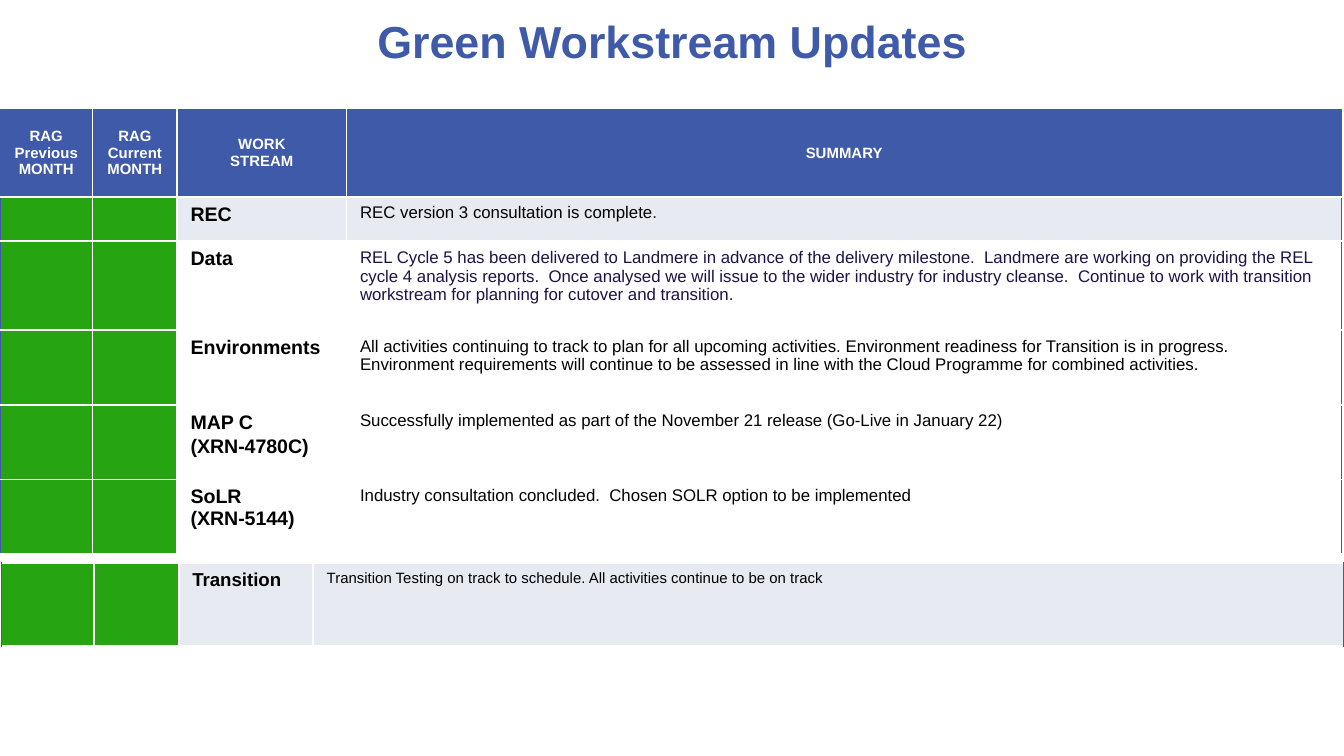
from lxml import etree
from pptx import Presentation
from pptx import util as u
from pptx.dml.color import RGBColor
from pptx.enum import text
from pptx.oxml.ns import qn

COLOURS = {
    "blue": "3E5AA8",
    "green": "26A412",
    "pale": "E8EAF1",
    "white": "FFFFFF",
    "black": "000000",
    "indigo": "1E1246",
}
CENTRE = text.PP_ALIGN.CENTER
LEFT = text.PP_ALIGN.LEFT
MIDDLE = text.MSO_ANCHOR.MIDDLE
TOP = text.MSO_ANCHOR.TOP


class StatusSlide:
    def __init__(self, slide, font="Arial"):
        self.slide = slide
        self.font = font

    def set_lines(self, frame, lines, size, colour, bold=False, align=LEFT, gap=0):
        for i, line in enumerate(lines):
            paragraph = frame.paragraphs[0] if i == 0 else frame.add_paragraph()
            paragraph.text = line
            paragraph.alignment = align
            paragraph.space_before = u.Pt(gap if i else 0)
            paragraph.space_after = u.Pt(gap)
            paragraph.font.name = self.font
            paragraph.font.size = u.Pt(size)
            paragraph.font.bold = bold
            paragraph.font.color.rgb = RGBColor.from_string(COLOURS[colour])

    def title(self, words, left, top, width, height):
        frame = self.slide.shapes.add_textbox(
            u.Cm(left), u.Cm(top), u.Cm(width), u.Cm(height)).text_frame
        frame.word_wrap = True
        frame.vertical_anchor = MIDDLE
        self.set_lines(frame, [words], 24, "blue", True, CENTRE)

    def table(self, left, top, widths, heights):
        table = self.slide.shapes.add_table(
            len(heights), len(widths), u.Cm(left), u.Cm(top),
            u.Cm(sum(widths)), u.Cm(sum(heights))).table
        table.first_row = table.horz_banding = False
        for column, width in zip(table.columns, widths):
            column.width = u.Cm(width)
        for row, height in zip(table.rows, heights):
            row.height = u.Cm(height)
        return table

    def cell(self, cell, fill, blue_sides, anchor=TOP):
        properties = cell._tc.get_or_add_tcPr()
        for side in "LRTB":
            colour, width = ("blue", 0.5) if side in blue_sides else ("white", 1)
            line = etree.SubElement(properties, qn(f"a:ln{side}"), w=str(u.Pt(width)))
            solid = etree.SubElement(line, qn("a:solidFill"))
            etree.SubElement(solid, qn("a:srgbClr"), val=COLOURS[colour])
        cell.fill.solid()
        cell.fill.fore_color.rgb = RGBColor.from_string(COLOURS[fill])
        cell.vertical_anchor = anchor

    def header(self, cells, headings):
        sides = ["LT", "T", "T", "TR"]
        for cell, lines, blue_sides in zip(cells, headings, sides):
            self.cell(cell, "blue", blue_sides, MIDDLE)
            self.set_lines(cell.text_frame, lines, 8, "white", True, CENTRE)

    def workstream(self, cells, names, summary, fill, colour="black",
                   name_size=10.5, summary_size=9):
        previous, current, name, update = cells
        for rag, blue_sides in ((previous, "L"), (current, "")):
            self.cell(rag, "green", blue_sides)
            rag.margin_top = rag.margin_bottom = 0
        self.cell(name, fill, "")
        self.set_lines(name.text_frame, names, name_size, "black", True, gap=0.8)
        self.cell(update, fill, "R")
        self.set_lines(update.text_frame, [summary], summary_size, colour)


HEADINGS = [
    ["RAG", "Previous", "MONTH"],
    ["RAG", "Current", "MONTH"],
    ["WORK", "STREAM"],
    ["SUMMARY"],
]
WORKSTREAMS = [
    (["REC"], "REC version 3 consultation is complete.", "pale", "black"),
    (["Data"],
     "REL Cycle 5 has been delivered to Landmere in advance of the delivery "
     "milestone.  Landmere are working on providing the REL cycle 4 analysis "
     "reports.  Once analysed we will issue to the wider industry for industry "
     "cleanse.  Continue to work with transition workstream for planning for "
     "cutover and transition.", "white", "indigo"),
    (["Environments"],
     "All activities continuing to track to plan for all upcoming activities. "
     "Environment readiness for Transition is in progress.  Environment "
     "requirements will continue to be assessed in line with the Cloud "
     "Programme for combined activities.", "white", "black"),
    (["MAP C", "(XRN-4780C)"],
     "Successfully implemented as part of the November 21 release "
     "(Go-Live in January 22)", "white", "black"),
    (["SoLR (XRN-5144)"],
     "Industry consultation concluded.  Chosen SOLR option to be implemented",
     "white", "black"),
]
RAG_WIDTHS = [1.75, 1.6]


def main():
    deck = Presentation()
    deck.slide_width, deck.slide_height = u.Cm(25.4), u.Cm(14.29)
    page = StatusSlide(deck.slides.add_slide(deck.slide_layouts[6]))

    updates = page.table(0, 2.06, RAG_WIDTHS + [3.2, 18.81],
                         [1.66, 0.84, 1.68] + [1.41] * 3)
    header, *rows = updates.rows
    page.header(header.cells, HEADINGS)
    for row, workstream in zip(rows, WORKSTREAMS):
        page.workstream(row.cells, *workstream)

    page.title("Green Workstream Updates", 1.27, 0, 22.86, 1.55)

    transition = page.table(0.03, 10.64, RAG_WIDTHS + [2.54, 19.46], [1.57])
    page.workstream(
        transition.rows[0].cells, ["Transition"],
        "Transition Testing on track to schedule. All activities continue to be on track",
        "pale", name_size=10, summary_size=8)

    deck.save("out.pptx")


if __name__ == "__main__":
    main()
